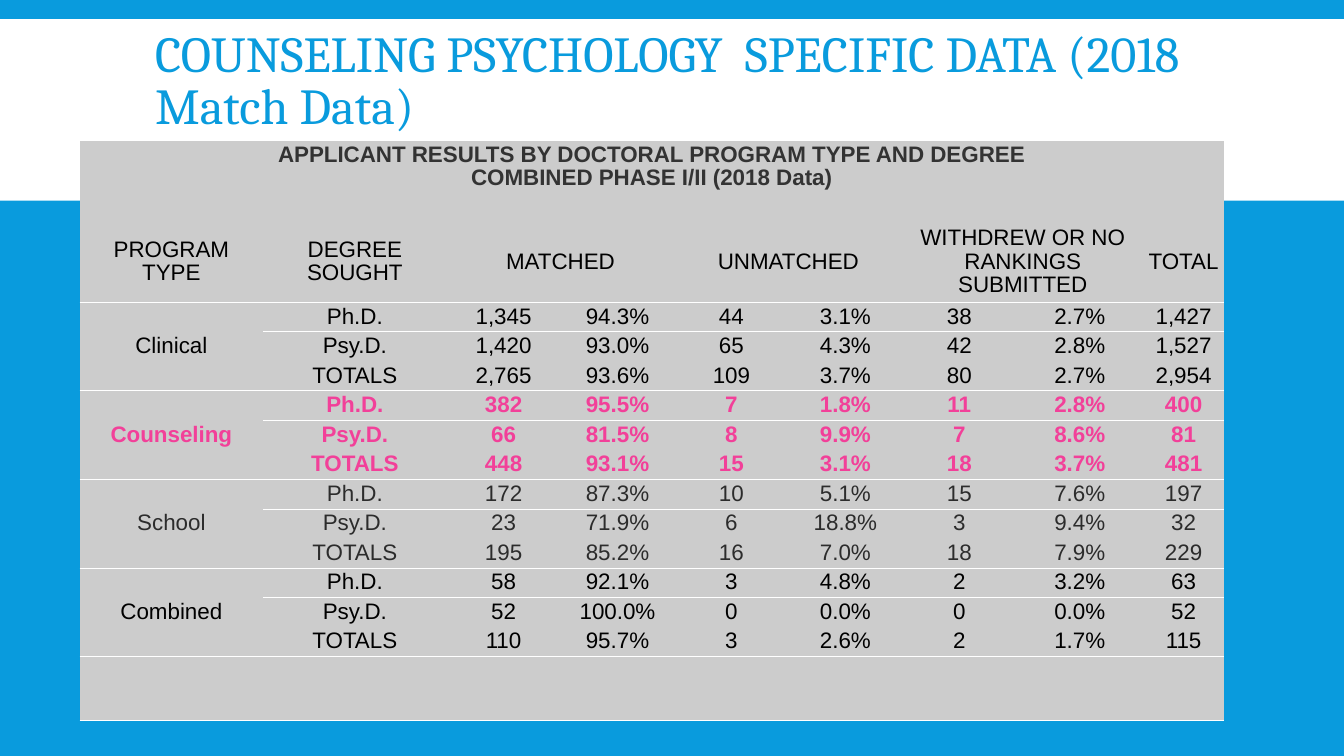
import pptx
import pptx.dml.color
import pptx.enum.shapes
import pptx.enum.text
import pptx.oxml
import pptx.oxml.ns
import pptx.util
from pptx.util import Inches

BLUE, WHITE, GRAY, BLACK = "099BDD", "FFFFFF", "CCCCCC", "000000"
DARK, CHARCOAL, PINK = "333333", "2C2C2C", "F24099"
NO_STYLE = "{2D5ABB26-0587-4C30-8999-92F81FD0307C}"

COLUMN_WIDTHS = [1.82, 1.82] + [1.13] * 5 + [1.26, 0.8]
ROW_HEIGHTS = [0.8, 0.78] + [0.28] * 12 + [0.63]

CAPTION = ("APPLICANT RESULTS BY DOCTORAL PROGRAM TYPE AND DEGREE\v"
           "COMBINED PHASE I/II (2018 Data)")
# Heading, first column, columns spanned
HEADINGS = [
    ("PROGRAM TYPE", 0, 1),
    ("DEGREE SOUGHT", 1, 1),
    ("MATCHED", 2, 2),
    ("UNMATCHED", 4, 2),
    ("WITHDREW OR NO RANKINGS SUBMITTED", 6, 2),
    ("TOTAL", 8, 1),
]
DEGREES = ["Ph.D.", "Psy.D.", "TOTALS"]
# Program type, text colour, bold, one line of results per degree
PROGRAMS = [
    ("Clinical", BLACK, False, [
        "1,345 94.3% 44 3.1% 38 2.7% 1,427",
        "1,420 93.0% 65 4.3% 42 2.8% 1,527",
        "2,765 93.6% 109 3.7% 80 2.7% 2,954"]),
    ("Counseling", PINK, True, [
        "382 95.5% 7 1.8% 11 2.8% 400",
        "66 81.5% 8 9.9% 7 8.6% 81",
        "448 93.1% 15 3.1% 18 3.7% 481"]),
    ("School", CHARCOAL, False, [
        "172 87.3% 10 5.1% 15 7.6% 197",
        "23 71.9% 6 18.8% 3 9.4% 32",
        "195 85.2% 16 7.0% 18 7.9% 229"]),
    ("Combined", BLACK, False, [
        "58 92.1% 3 4.8% 2 3.2% 63",
        "52 100.0% 0 0.0% 0 0.0% 52",
        "110 95.7% 3 2.6% 2 1.7% 115"]),
]


def rgb(color):
    return pptx.dml.color.RGBColor.from_string(color)


def style_text(frame, font, size, color, bold=False):
    for paragraph in frame.paragraphs:
        for run in paragraph.runs:
            run.font.name = font
            run.font.size = pptx.util.Pt(size)
            run.font.color.rgb = rgb(color)
            run.font.bold = bold


def add_band(slide):
    band = slide.shapes.add_shape(pptx.enum.shapes.MSO_SHAPE.RECTANGLE,
                                  0, Inches(0.19), Inches(13.33), Inches(1.8))
    band.shadow.inherit = False
    band.fill.solid()
    band.fill.fore_color.rgb = rgb(WHITE)
    band.line.fill.background()


def add_title(slide, text):
    title = slide.shapes.add_textbox(Inches(1.44), 0, Inches(10.7), Inches(1.65))
    frame = title.text_frame
    frame.word_wrap = True
    frame.vertical_anchor = pptx.enum.text.MSO_ANCHOR.MIDDLE
    frame.text = text
    frame.paragraphs[0].line_spacing = 0.85
    style_text(frame, "Cambria", 36, BLUE)


def write_cell(cell, text, color=BLACK, bold=False):
    cell.vertical_anchor = pptx.enum.text.MSO_ANCHOR.MIDDLE
    cell.text_frame.text = text
    paragraph = cell.text_frame.paragraphs[0]
    paragraph.alignment = pptx.enum.text.PP_ALIGN.CENTER
    paragraph.line_spacing = 0.95
    style_text(cell.text_frame, "Arial", 16, color, bold)


def rule_row(table, row, side):
    """Draw a thin white line along the top (lnT) or bottom (lnB) of a row."""
    for cell in table.rows[row].cells:
        line = pptx.oxml.parse_xml(
            f'<a:{side} {pptx.oxml.ns.nsdecls("a")} w="9525"><a:solidFill>'
            f'<a:srgbClr val="{WHITE}"/></a:solidFill></a:{side}>')
        cell._tc.get_or_add_tcPr().append(line)


def add_results_grid(slide):
    table = slide.shapes.add_table(
        len(ROW_HEIGHTS), len(COLUMN_WIDTHS), Inches(0.79), Inches(1.4),
        Inches(sum(COLUMN_WIDTHS)), Inches(sum(ROW_HEIGHTS))).table
    table.first_row = table.horz_banding = False
    table._tbl.tblPr.find(pptx.oxml.ns.qn("a:tableStyleId")).text = NO_STYLE
    for column, width in zip(table.columns, COLUMN_WIDTHS):
        column.width = Inches(width)
    for row, height in zip(table.rows, ROW_HEIGHTS):
        row.height = Inches(height)

    # White rules above each program and around the footer
    footer = len(ROW_HEIGHTS) - 1
    for row in range(2, footer + 1, len(DEGREES)):
        rule_row(table, row, "lnT")
    rule_row(table, footer, "lnB")
    for cell in table.iter_cells():
        cell.margin_left = cell.margin_right = Inches(0.02)
        cell.margin_top = cell.margin_bottom = Inches(0.02)
        cell.fill.solid()
        cell.fill.fore_color.rgb = rgb(GRAY)
    return table


def fill_results(table):
    # Caption and footer span the whole width
    last_column = len(COLUMN_WIDTHS) - 1
    footer = len(ROW_HEIGHTS) - 1
    for row in (0, footer):
        table.cell(row, 0).merge(table.cell(row, last_column))
    caption = table.cell(0, 0)
    write_cell(caption, CAPTION, DARK, True)
    caption.vertical_anchor = pptx.enum.text.MSO_ANCHOR.TOP

    # Column headings
    for heading, column, span in HEADINGS:
        if span > 1:
            table.cell(1, column).merge(table.cell(1, column + span - 1))
        write_cell(table.cell(1, column), heading)

    # Three degree rows per program
    for index, (program, color, bold, results) in enumerate(PROGRAMS):
        top = 2 + index * len(DEGREES)
        label = table.cell(top, 0)
        label.merge(table.cell(top + len(DEGREES) - 1, 0))
        write_cell(label, program, color, bold)
        for offset, (degree, values) in enumerate(zip(DEGREES, results)):
            for column, text in enumerate([degree] + values.split(), start=1):
                write_cell(table.cell(top + offset, column), text, color, bold)


def main():
    deck = pptx.Presentation()
    deck.slide_width, deck.slide_height = Inches(13.33), Inches(7.5)
    slide = deck.slides.add_slide(deck.slide_layouts[6])
    slide.background.fill.solid()
    slide.background.fill.fore_color.rgb = rgb(BLUE)

    add_band(slide)
    add_title(slide, "COUNSELING PSYCHOLOGY  SPECIFIC DATA (2018 Match Data)")
    fill_results(add_results_grid(slide))
    deck.save("out.pptx")


if __name__ == "__main__":
    main()
